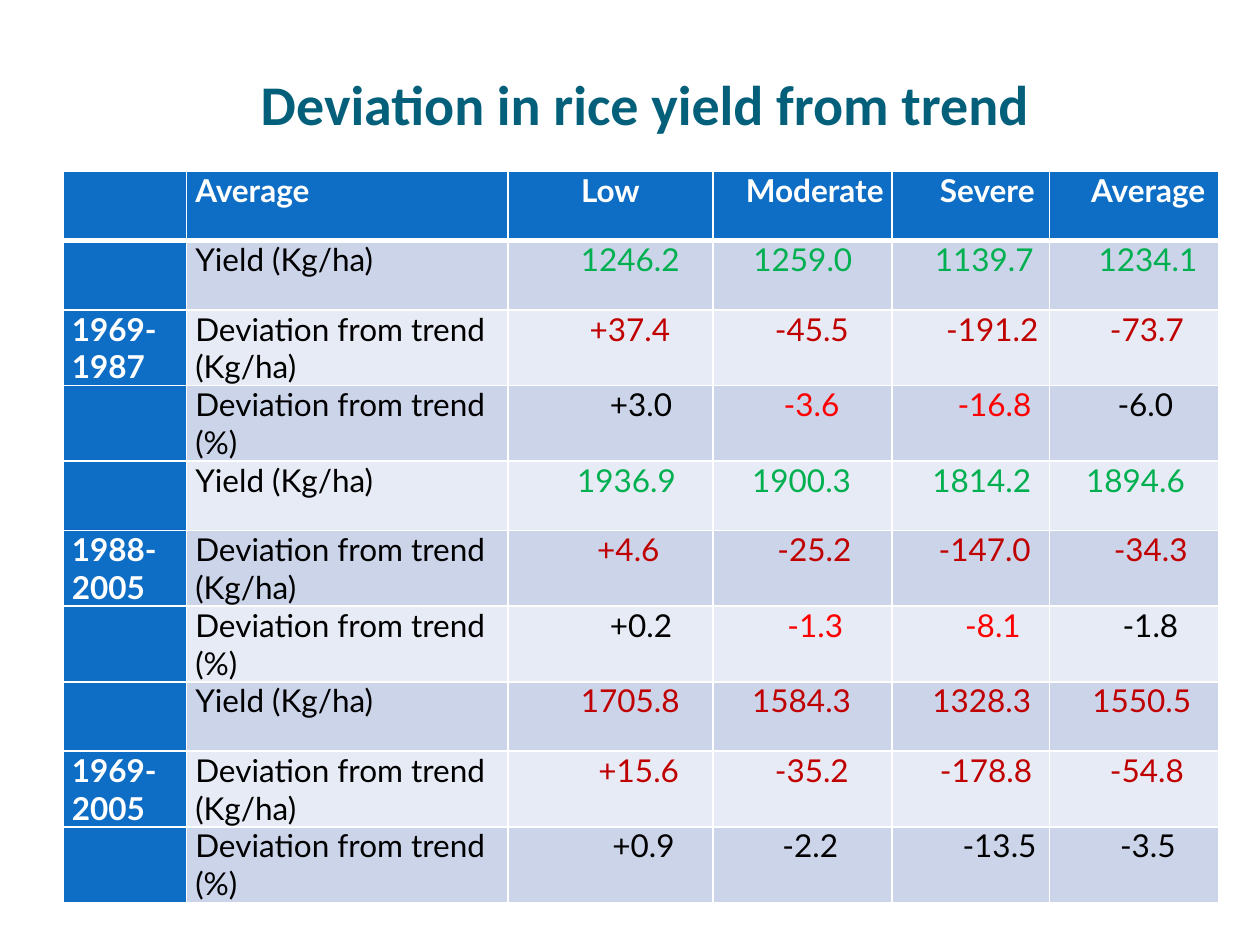
"""Build a slide with a table of rice yield deviations from trend."""
from typing import NamedTuple

from lxml.etree import fromstring
from pptx import Presentation
from pptx.dml.color import RGBColor
from pptx.enum.text import MSO_ANCHOR, PP_ALIGN
from pptx.oxml.ns import nsdecls
from pptx.util import Inches, Pt

WHITE = RGBColor(0xFF, 0xFF, 0xFF)
BLACK = RGBColor(0, 0, 0)
TEAL = RGBColor(0x04, 0x60, 0x7A)
BLUE = RGBColor(0x0E, 0x6E, 0xC5)
DARK_BAND = RGBColor(0xCC, 0xD4, 0xEA)
LIGHT_BAND = RGBColor(0xE7, 0xEB, 0xF5)
GREEN = RGBColor(0x00, 0xB0, 0x50)
CRIMSON = RGBColor(0xC0, 0x00, 0x00)
RED = RGBColor(0xFF, 0x00, 0x00)

COLUMN_WIDTHS = (0.98, 2.55, 1.63, 1.42, 1.25, 1.34)
ROW_HEIGHT = 0.55
LAST_ROW_HEIGHT = 0.6
LABEL_INDENT = 0.07
MEASURES = ("Yield (Kg/ha)", "Deviation from trend (Kg/ha)", "Deviation from trend (%)")


class Entry(NamedTuple):
    text: str
    indent: float = LABEL_INDENT
    color: RGBColor = BLACK
    bold: bool = False
    align: PP_ALIGN = PP_ALIGN.LEFT


class Period(NamedTuple):
    name: str
    yields: list[Entry]
    deviations: list[Entry]
    percentages: list[Entry]


def entries(colors: RGBColor | tuple, *values: tuple[str, float]) -> list[Entry]:
    """Pair each value and indent with one shared colour or its own."""
    palette = colors if isinstance(colors, list) else [colors] * len(values)
    return [Entry(text, indent, color) for (text, indent), color in zip(values, palette)]


HEADER = [
    Entry(""),
    Entry("Average", LABEL_INDENT, WHITE, True),
    Entry("Low", 0, WHITE, True, PP_ALIGN.CENTER),
    Entry("Moderate", 0.26, WHITE, True),
    Entry("Severe", 0.38, WHITE, True),
    Entry("Average", 0.33, WHITE, True),
]
MIXED = [BLACK, RED, RED, BLACK]
PERIODS = [
    Period(
        "1969-1987",
        entries(GREEN, ("1246.2", 0.58), ("1259.0", 0.32), ("1139.7", 0.34), ("1234.1", 0.39)),
        entries(CRIMSON, ("+37.4", 0.65), ("-45.5", 0.49), ("-191.2", 0.43), ("-73.7", 0.48)),
        entries(MIXED, ("+3.0", 0.81), ("-3.6", 0.56), ("-16.8", 0.52), ("-6.0", 0.54)),
    ),
    Period(
        "1988-2005",
        entries(GREEN, ("1936.9", 0.55), ("1900.3", 0.31), ("1814.2", 0.32), ("1894.6", 0.29)),
        entries(CRIMSON, ("+4.6", 0.71), ("-25.2", 0.51), ("-147.0", 0.37), ("-34.3", 0.51)),
        entries(MIXED, ("+0.2", 0.81), ("-1.3", 0.59), ("-8.1", 0.58), ("-1.8", 0.58)),
    ),
    Period(
        "1969-2005",
        entries(CRIMSON, ("1705.8", 0.58), ("1584.3", 0.31), ("1328.3", 0.32), ("1550.5", 0.34)),
        entries(CRIMSON, ("+15.6", 0.72), ("-35.2", 0.49), ("-178.8", 0.38), ("-54.8", 0.48)),
        entries(BLACK, ("+0.9", 0.83), ("-2.2", 0.55), ("-13.5", 0.56), ("-3.5", 0.56)),
    ),
]


def table_rows() -> list[list[Entry]]:
    """List the header and the three measures of each period."""
    rows = [HEADER]
    for period in PERIODS:
        names = ("", period.name, "")
        groups = (period.yields, period.deviations, period.percentages)
        for name, measure, values in zip(names, MEASURES, groups):
            rows.append([Entry(name, color=WHITE, bold=True), Entry(measure), *values])
    return rows


def set_borders(cell, widths: dict[str, float]) -> None:
    """Draw white borders of the given point widths around a cell."""
    properties = cell._tc.get_or_add_tcPr()
    for position, (side, width) in enumerate(widths.items()):
        line = fromstring(
            f'<a:ln{side} {nsdecls("a")} w="{Pt(width)}"><a:solidFill>'
            f'<a:srgbClr val="{WHITE}"/></a:solidFill></a:ln{side}>'
        )
        properties.insert(position, line)


def fill_cell(cell, entry: Entry, row: int, column: int) -> None:
    """Write one entry and give its cell fill, margins and borders."""
    cell.margin_left = Inches(entry.indent)
    cell.margin_right = cell.margin_top = cell.margin_bottom = 0
    cell.vertical_anchor = MSO_ANCHOR.TOP
    band = DARK_BAND if row % 2 else LIGHT_BAND
    cell.fill.solid()
    cell.fill.fore_color.rgb = BLUE if row == 0 or column == 0 else band
    cell.text = entry.text
    paragraph = cell.text_frame.paragraphs[0]
    paragraph.alignment = entry.align
    font = paragraph.font
    font.name, font.size, font.bold = "Lato", Pt(18), entry.bold
    font.color.rgb = entry.color
    set_borders(cell, {"L": 1, "R": 1, "T": 3 if row == 1 else 1, "B": 3 if row == 0 else 1})


def add_title(slide, text: str) -> None:
    """Place and format the slide title."""
    title = slide.shapes.title
    title.left, title.top = Inches(0.33), Inches(0.3)
    title.width, title.height = Inches(9.58), Inches(0.78)
    frame = title.text_frame
    frame.margin_left = frame.margin_right = frame.margin_bottom = 0
    frame.margin_top = Inches(0.25)
    frame.vertical_anchor = MSO_ANCHOR.MIDDLE
    frame.text = text
    paragraph = frame.paragraphs[0]
    paragraph.alignment = PP_ALIGN.CENTER
    font = paragraph.font
    font.name, font.size, font.bold = "Calibri", Pt(32), True
    font.color.rgb = TEAL


def add_yield_table(slide) -> None:
    """Add the table of yields and deviations."""
    rows = table_rows()
    height = ROW_HEIGHT * (len(rows) - 1) + LAST_ROW_HEIGHT
    table = slide.shapes.add_table(
        len(rows), len(COLUMN_WIDTHS), Inches(0.5), Inches(1.36),
        Inches(sum(COLUMN_WIDTHS)), Inches(height),
    ).table
    for column, width in zip(table.columns, COLUMN_WIDTHS):
        column.width = Inches(width)
    for row_index, row in enumerate(rows):
        is_last = row_index == len(rows) - 1
        table.rows[row_index].height = Inches(LAST_ROW_HEIGHT if is_last else ROW_HEIGHT)
        for column_index, entry in enumerate(row):
            fill_cell(table.cell(row_index, column_index), entry, row_index, column_index)


def main() -> None:
    """Build and save the deck."""
    deck = Presentation()
    deck.slide_width, deck.slide_height = Inches(10), Inches(7.5)
    slide = deck.slides.add_slide(deck.slide_layouts[5])
    add_title(slide, "Deviation in rice yield from trend")
    add_yield_table(slide)
    deck.save("out.pptx")


if __name__ == "__main__":
    main()
